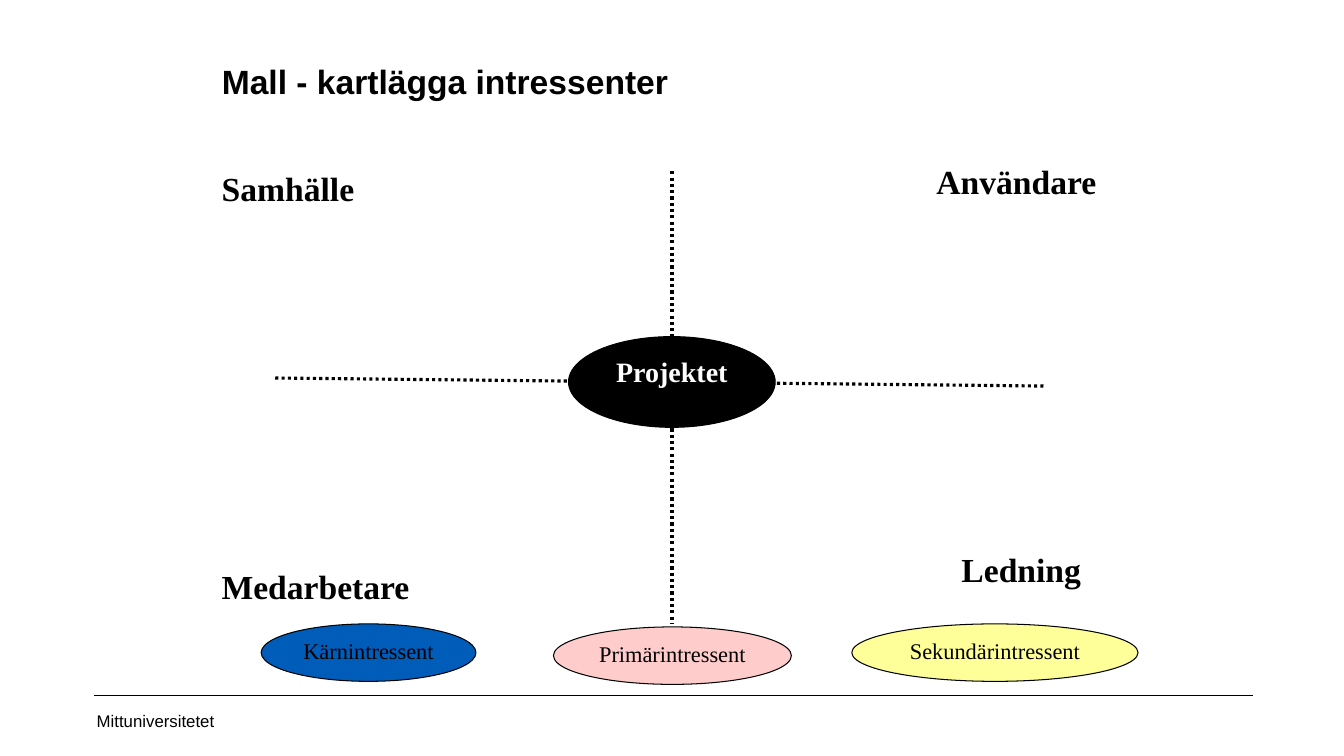
from lxml import etree
from pptx import Presentation
from pptx.dml.color import RGBColor
from pptx.enum.dml import MSO_LINE_DASH_STYLE as Dash
from pptx.enum.shapes import MSO_CONNECTOR_TYPE as Link, MSO_SHAPE as Preset
from pptx.enum.text import MSO_ANCHOR as Anchor, MSO_AUTO_SIZE as AutoSize, PP_ALIGN as Align
from pptx.oxml.ns import qn
from pptx.util import Inches, Pt

BLACK = RGBColor(0x00, 0x00, 0x00)
WHITE = RGBColor(0xFF, 0xFF, 0xFF)
BLUE = RGBColor(0x00, 0x5C, 0xB9)
PINK = RGBColor(0xFF, 0xCC, 0xCC)
YELLOW = RGBColor(0xFF, 0xFF, 0x99)
SERIF, SANS = "Times New Roman", "Arial"

deck = Presentation()
deck.slide_width, deck.slide_height = Inches(13.33), Inches(7.5)
COL, ROW = deck.slide_width / 100, deck.slide_height / 100
slide = deck.slides.add_slide(deck.slide_layouts[5])
shapes = slide.shapes


def grid(left, top, width, height):
    return int(left * COL), int(top * ROW), int(width * COL), int(height * ROW)


def write(holder, text, font=SERIF, size=24, color=BLACK, bold=False,
          align=Align.LEFT, anchor=Anchor.TOP, wrap=False, spacing=None):
    frame = holder.text_frame
    frame.text = text
    frame.word_wrap, frame.vertical_anchor = wrap, anchor
    line = frame.paragraphs[0]
    line.alignment, line.line_spacing = align, spacing
    style = line.runs[0].font
    style.name, style.size, style.bold = font, Pt(size), bold
    style.color.rgb = color
    return frame


footer = shapes.add_textbox(*grid(6.9, 92.67, 22.5, 5.33))
footer_frame = write(footer, "Mittuniversitetet", font=SANS, size=12,
                     anchor=Anchor.MIDDLE, wrap=True)
footer_frame.margin_left = Inches(0.04)

heading = shapes.title
heading.left, heading.top, heading.width, heading.height = grid(15.75, 6, 63.15, 16.67)
heading_frame = write(heading, "Mall - kartlägga intressenter", font=SANS, bold=True,
                      wrap=True, spacing=Pt(36))
heading_frame.auto_size = AutoSize.NONE

for start_col, start_row, end_col, end_row, weight, dash in [
    (6.98, 92, 93.23, 92, 0.25, Dash.SOLID),
    (50, 22.67, 50, 82.53, 2.25, Dash.ROUND_DOT),
    (20.48, 50, 77.78, 51.07, 2.25, Dash.ROUND_DOT),
]:
    divider = shapes.add_connector(Link.STRAIGHT, *grid(start_col, start_row, end_col, end_row))
    divider.line.color.rgb = BLACK
    divider.line.width = Pt(weight)
    divider.line.dash_style = dash
    etree.SubElement(divider._element.spPr, qn("a:effectLst"))

for group, *place in [
    ("Samhälle", 15.75, 21.6, 11.48, 6.8),
    ("Medarbetare", 15.75, 74.13, 15.6, 6.8),
    ("Ledning", 70.8, 72, 10.5, 6.8),
    ("Användare", 68.93, 20.67, 13.58, 6.8),
]:
    group_frame = write(shapes.add_textbox(*grid(*place)), group, bold=True)
    group_frame.auto_size = AutoSize.SHAPE_TO_FIT_TEXT

for role, fill, ink, size, bold, *place in [
    ("Projektet", BLACK, WHITE, 20, True, 42.3, 44.53, 15.38, 12),
    ("Kärnintressent", BLUE, BLACK, 16, False, 19.43, 82.53, 15.98, 7.6),
    ("Primärintressent", PINK, BLACK, 16, False, 41.18, 82.93, 17.7, 7.6),
    ("Sekundärintressent", YELLOW, BLACK, 16, False, 63.38, 82.53, 21.3, 7.6),
]:
    stakeholder = shapes.add_shape(Preset.OVAL, *grid(*place))
    stakeholder.shadow.inherit = False
    stakeholder.fill.solid()
    stakeholder.fill.fore_color.rgb = fill
    stakeholder.line.color.rgb = BLACK
    stakeholder.line.width = Pt(0.75)
    write(stakeholder, role, size=size, color=ink, bold=bold, align=Align.CENTER)

deck.save("out.pptx")
